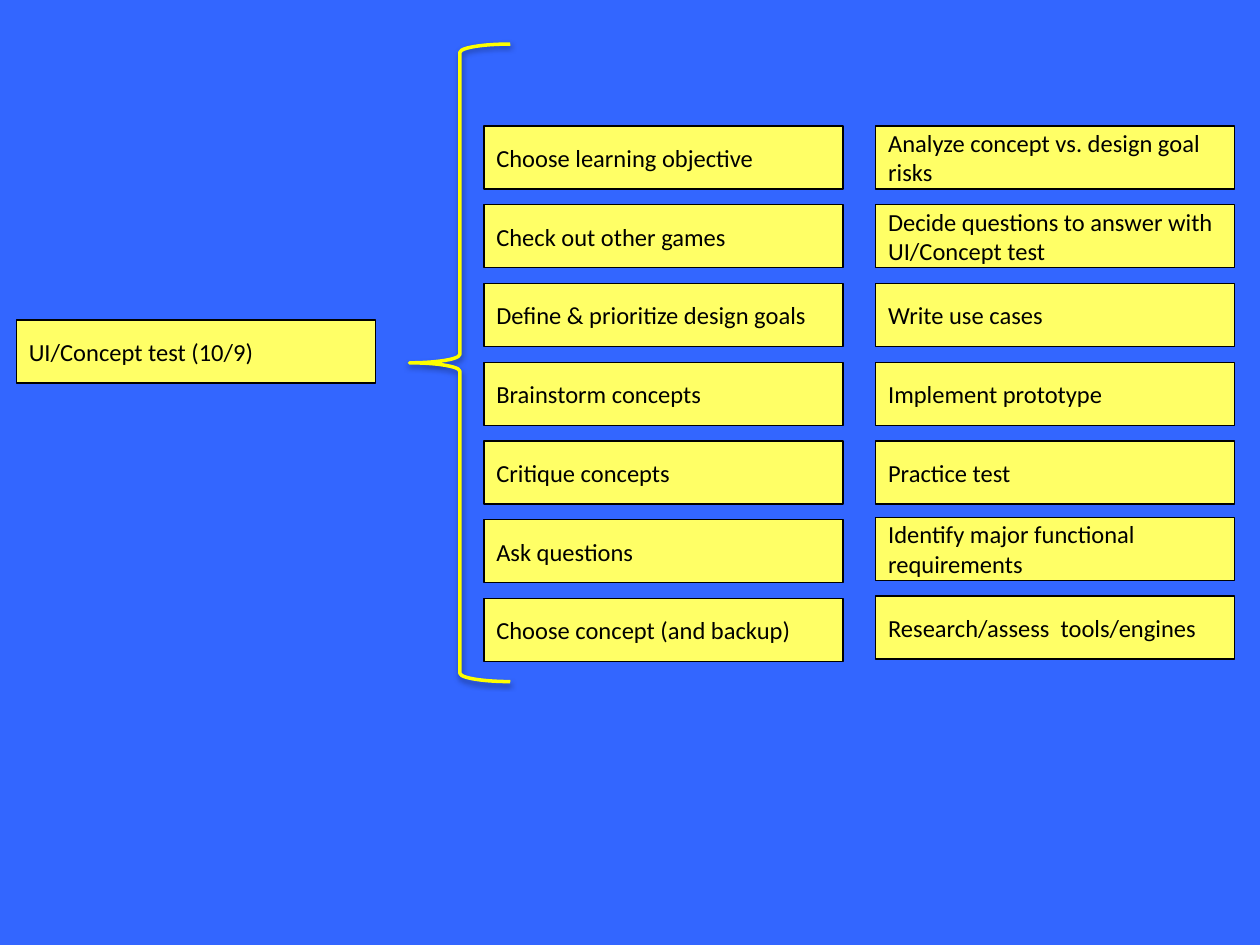
from dataclasses import dataclass

from lxml import etree
from pptx import Presentation
from pptx import util as u
from pptx.dml.color import RGBColor
from pptx.enum import shapes, text
from pptx.oxml import ns


@dataclass(frozen=True)
class Theme:
    background: str = "3366FF"
    card: str = "FFFF66"
    ink: str = "000000"
    brace: str = "FFFF00"
    font: str = "Calibri"
    size: float = 14
    border: float = 0.75
    brace_width: float = 2


theme = Theme()

CARD_WIDTH, CARD_HEIGHT = 2.85, 0.5
GOAL_LEFT, GOAL_TOP = 0.13, 2.54
FIRST_ROW, ROW_PITCH = 1, 0.625
STEP_COLUMNS = [
    (3.84, [
        "Choose learning objective",
        "Check out other games",
        "Define & prioritize design goals",
        "Brainstorm concepts",
        "Critique concepts",
        "Ask questions",
        "Choose concept (and backup)",
    ]),
    (6.95, [
        "Analyze concept vs. design goal\nrisks",
        "Decide questions to answer with\nUI/Concept test",
        "Write use cases",
        "Implement prototype",
        "Practice test",
        "Identify major functional\nrequirements",
        "Research/assess  tools/engines",
    ]),
]

deck = Presentation()
deck.slide_width, deck.slide_height = u.Inches(10), u.Inches(7.5)
page = deck.slides.add_slide(deck.slide_layouts[6])
page.background.fill.solid()
page.background.fill.fore_color.rgb = RGBColor.from_string(theme.background)


def add_card(words, *, left, top, fill=theme.card, ink=theme.ink, size=theme.size):
    box = page.shapes.add_shape(
        shapes.MSO_SHAPE.RECTANGLE,
        *map(u.Inches, (left, top, CARD_WIDTH, CARD_HEIGHT)))
    box.shadow.inherit = False
    box.fill.solid()
    box.fill.fore_color.rgb = RGBColor.from_string(fill)
    box.line.color.rgb = RGBColor.from_string(ink)
    box.line.width = u.Pt(theme.border)
    frame = box.text_frame
    frame.word_wrap = False
    frame.vertical_anchor = text.MSO_ANCHOR.MIDDLE
    frame.text = words
    for para in frame.paragraphs:
        para.alignment = text.PP_ALIGN.LEFT
        para.font.name = theme.font
        para.font.size = u.Pt(size)
        para.font.color.rgb = RGBColor.from_string(ink)


add_card("UI/Concept test (10/9)", left=GOAL_LEFT, top=GOAL_TOP)

brace = page.shapes.add_shape(
    shapes.MSO_SHAPE.LEFT_BRACE, *map(u.Inches, (3.25, 0.35, 0.8, 5.06)))
brace.fill.background()
brace.line.color.rgb = RGBColor.from_string(theme.brace)
brace.line.width = u.Pt(theme.brace_width)
brace.shadow.inherit = False
effects = brace.element.spPr.find(ns.qn("a:effectLst"))
shadow = etree.SubElement(effects, ns.qn("a:outerShdw"), blurRad="40000",
                          dist="20000", dir="5400000", rotWithShape="0")
shade = etree.SubElement(shadow, ns.qn("a:srgbClr"), val=theme.ink)
etree.SubElement(shade, ns.qn("a:alpha"), val="38000")

for column, (left, steps) in enumerate(STEP_COLUMNS):
    for row, step in enumerate(steps):
        # The last two steps on the right sit slightly higher than the grid.
        lift = 0.02 if column == 1 and row >= 5 else 0
        add_card(step, left=left, top=FIRST_ROW + row * ROW_PITCH - lift)

deck.save("out.pptx")
